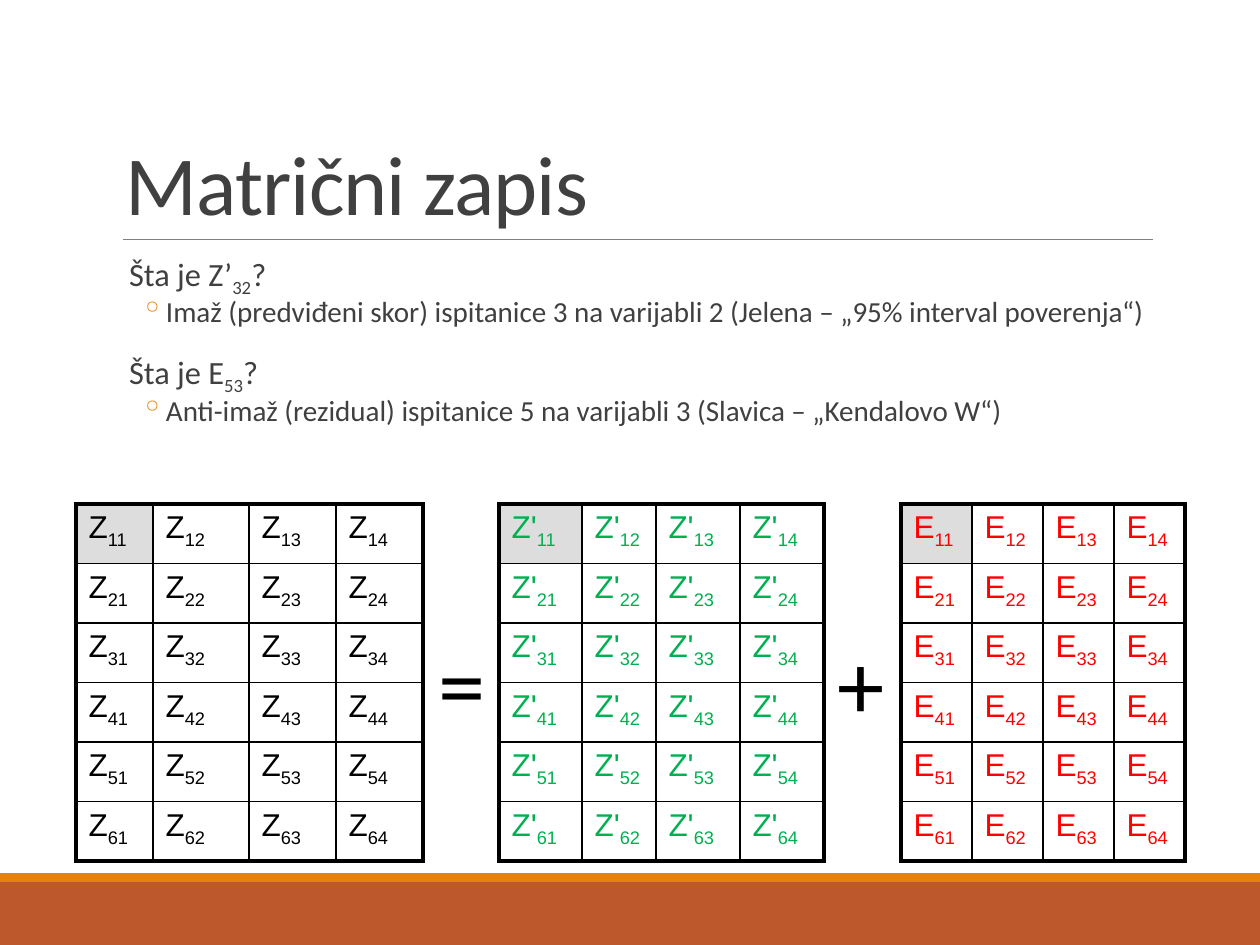
from pptx import Presentation
from pptx.dml.color import RGBColor
from pptx.enum.shapes import MSO_CONNECTOR, MSO_SHAPE
from pptx.enum.text import MSO_ANCHOR, MSO_AUTO_SIZE, PP_ALIGN
from pptx.oxml.ns import qn
from pptx.util import Pt
from lxml.etree import SubElement

SCALE = 914400 / 126
BLACK = RGBColor(0x00, 0x00, 0x00)
DARK = RGBColor(0x40, 0x40, 0x40)
GRAY = RGBColor(0x80, 0x80, 0x80)
PALE = RGBColor(0xDD, 0xDD, 0xDD)
GREEN = RGBColor(0x00, 0xB0, 0x50)
RED = RGBColor(0xFF, 0x00, 0x00)
RUST = RGBColor(0xBD, 0x58, 0x2C)
ORANGE = RGBColor(0xE4, 0x83, 0x12)
ROWS = 6
COLS = 4


def px(*nums):
    emus = [round(n * SCALE) for n in nums]
    return emus if len(emus) > 1 else emus[0]


def write(par, text, size, color, font="Calibri", sub="", tail="",
          align=PP_ALIGN.LEFT, space=None, before=0, after=0, track=None):
    """Fill a paragraph with text, an optional subscript and a tail."""
    par.alignment = align
    if space:
        par.line_spacing = space
    par.space_before, par.space_after = Pt(before), Pt(after)
    for part, base in ((text, 0), (sub, -25000), (tail, 0)):
        if not part:
            continue
        run = par.add_run()
        run.text = part
        run.font.size, run.font.name = Pt(size), font
        run.font.color.rgb = color
        props = run.font._element
        if base:
            props.set("baseline", str(base))
        if track:
            props.set("spc", str(track))


def add_mark(par, char, left, hang):
    """Give a paragraph a bullet with a hanging indent."""
    props = par._p.get_or_add_pPr()
    props.set("marL", str(px(left)))
    props.set("indent", str(px(-hang)))
    tint = SubElement(props, qn("a:buClr"))
    SubElement(tint, qn("a:srgbClr")).set("val", str(ORANGE))
    SubElement(props, qn("a:buChar")).set("char", char)


def add_bar(slide, top, height, color):
    bar = slide.shapes.add_shape(MSO_SHAPE.RECTANGLE, *px(0, top, 1260, height))
    bar.shadow.inherit = False
    bar.fill.solid()
    bar.fill.fore_color.rgb = color
    bar.line.fill.background()


def add_rule(slide, left, right, y):
    rule = slide.shapes.add_connector(MSO_CONNECTOR.STRAIGHT,
                                      *px(left, y, right, y))
    rule.line.color.rgb = GRAY
    rule.line.width = Pt(0.5)
    SubElement(rule._element.spPr, qn("a:effectLst"))


def set_title(slide, text):
    title = slide.shapes.title
    title.left, title.top, title.width, title.height = px(113, 39, 1040, 200)
    frame = title.text_frame
    frame.auto_size = MSO_AUTO_SIZE.NONE
    frame.vertical_anchor = MSO_ANCHOR.BOTTOM
    write(frame.paragraphs[0], text, 48, DARK, space=0.85, track=-50)


def add_body(slide, items):
    """Add questions, each followed by its indented answer."""
    frame = slide.shapes.add_textbox(*px(113, 252, 1052, 210)).text_frame
    frame.word_wrap = True
    frame.margin_left = frame.margin_right = 0
    for i, (ask, sub, reply) in enumerate(items):
        par = frame.add_paragraph() if i else frame.paragraphs[0]
        write(par, ask, 18.5, DARK, sub=sub, tail="?", space=0.8,
              before=12 if i else 0, after=2)
        add_mark(par, " ", 13, 13)
        par = frame.add_paragraph()
        par.level = 1
        write(par, reply, 16.6, DARK, space=0.8, before=2, after=4)
        add_mark(par, "◦", 53, 25)


def set_edges(cell, row, col):
    """Draw thick edges around the matrix and thin ones inside."""
    props = cell._tc.get_or_add_tcPr()
    outer = {"L": col == 0, "R": col == COLS - 1,
             "T": row == 0, "B": row == ROWS - 1}
    for side, thick in outer.items():
        edge = SubElement(props, qn("a:ln" + side))
        edge.set("w", str(Pt(2.25 if thick else 1)))
        fill = SubElement(edge, qn("a:solidFill"))
        SubElement(fill, qn("a:srgbClr")).set("val", str(BLACK))


def add_matrix(slide, name, left, widths, color):
    """Add a table of indexed symbols with the first cell shaded."""
    frame = slide.shapes.add_table(ROWS, COLS, *px(left, 504, sum(widths), 357))
    table = frame.table
    table.first_row = table.horz_banding = False
    for col, width in zip(table.columns, widths):
        col.width = px(width)
    for r in range(ROWS):
        for c in range(COLS):
            cell = table.cell(r, c)
            set_edges(cell, r, c)
            if r == c == 0:
                cell.fill.solid()
                cell.fill.fore_color.rgb = PALE
            else:
                cell.fill.background()
            write(cell.text_frame.paragraphs[0], name, 18, color,
                  font="Arial", sub=f"{r + 1}{c + 1}")


def add_sign(slide, sign, left):
    frame = slide.shapes.add_textbox(*px(left, 619, 73, 127)).text_frame
    frame.word_wrap = False
    frame.auto_size = MSO_AUTO_SIZE.SHAPE_TO_FIT_TEXT
    write(frame.paragraphs[0], sign, 54, BLACK, align=PP_ALIGN.CENTER)


def main():
    deck = Presentation()
    deck.slide_width, deck.slide_height = px(1260, 945)
    slide = deck.slides.add_slide(deck.slide_layouts[5])

    # Footer bars and title rule
    add_bar(slide, 882, 63, RUST)
    add_bar(slide, 873, 9, ORANGE)
    add_rule(slide, 123, 1153, 239)

    # Title and questions
    set_title(slide, "Matrični zapis")
    add_body(slide, [
        ("Šta je Z’", "32", "Imaž (predviđeni skor) ispitanice 3 na varijabli 2 "
         "(Jelena – „95% interval poverenja“)"),
        ("Šta je E", "53", "Anti-imaž (rezidual) ispitanice 5 na varijabli 3 "
         "(Slavica – „Kendalovo W“)"),
    ])

    # Matrix equation
    add_matrix(slide, "Z", 76, (77, 96, 87, 87), BLACK)
    add_matrix(slide, "Z'", 499, (83, 74, 84, 84), GREEN)
    add_matrix(slide, "E", 901, (71,) * COLS, RED)
    add_sign(slide, "=", 426)
    add_sign(slide, "+", 825)

    deck.save("out.pptx")


if __name__ == "__main__":
    main()
